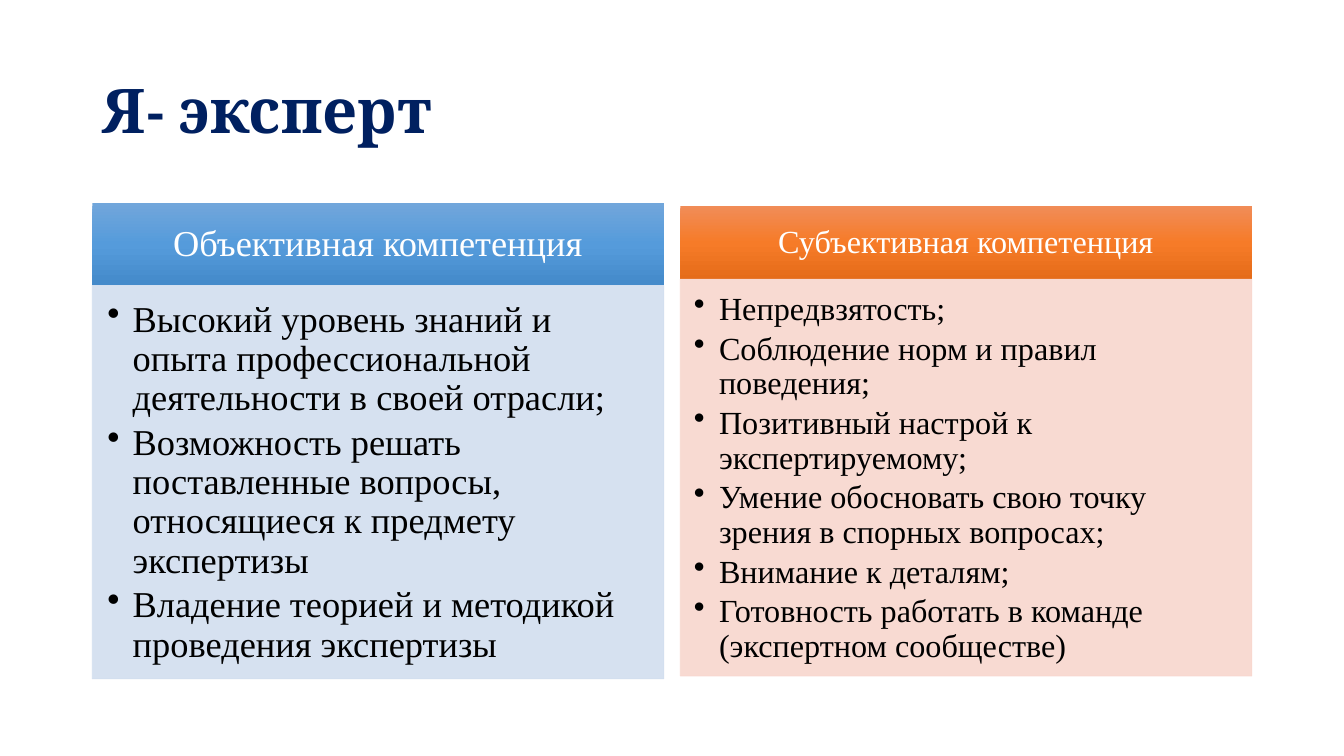
from lxml import etree
from pptx import Presentation
from pptx.dml.color import RGBColor
from pptx.enum.shapes import MSO_SHAPE
from pptx.enum.text import MSO_ANCHOR, PP_ALIGN
from pptx.oxml.ns import qn
from pptx.util import Pt

RECTANGLE = MSO_SHAPE.RECTANGLE
TOP, MIDDLE = MSO_ANCHOR.TOP, MSO_ANCHOR.MIDDLE
LEFT, CENTER = PP_ALIGN.LEFT, PP_ALIGN.CENTER


def color(value):
    return RGBColor.from_string(value)


class SlideBuilder:
    body_font = "Times New Roman"
    title_font = "Cambria"
    line_spacing = 0.9
    indent = 18

    def __init__(self, slide):
        self.slide = slide

    def set_text(self, shape, lines, font, anchor, insets, align=LEFT, after=0, bullets=False):
        frame = shape.text_frame
        sides = ("margin_left", "margin_top", "margin_right", "margin_bottom")
        frame_format = {"word_wrap": True, "vertical_anchor": anchor}
        frame_format.update(zip(sides, map(Pt, insets)))
        for name, value in frame_format.items():
            setattr(frame, name, value)
        for index, line in enumerate(lines):
            paragraph = frame.add_paragraph() if index else frame.paragraphs[0]
            paragraph.text = line
            paragraph_format = {"alignment": align, "line_spacing": self.line_spacing,
                                "space_after": Pt(after)}
            for name, value in paragraph_format.items():
                setattr(paragraph, name, value)
            if bullets:
                self.bullet(paragraph)
            for name, value in font.items():
                if name == "color":
                    paragraph.font.color.rgb = color(value)
                else:
                    setattr(paragraph.font, name, value)

    def bullet(self, paragraph):
        properties = paragraph._p.get_or_add_pPr()
        properties.set("marL", str(Pt(self.indent)))
        properties.set("indent", str(-Pt(self.indent)))
        etree.SubElement(properties, qn("a:buChar")).set("char", "•")

    def rectangle(self, left, top, width, height):
        shape = self.slide.shapes.add_shape(RECTANGLE, Pt(left), Pt(top), Pt(width), Pt(height))
        shape.shadow.inherit = False
        return shape

    def title(self, left, top, width, height, text):
        box = self.slide.shapes.add_textbox(Pt(left), Pt(top), Pt(width), Pt(height))
        font = {"name": self.title_font, "size": Pt(44), "bold": True, "color": "002060"}
        self.set_text(box, [text], font, MIDDLE, (7.2, 3.6, 7.2, 3.6))

    def header(self, left, top, width, height, text, size, gradient, insets):
        shape = self.rectangle(left, top, width, height)
        shape.line.fill.background()
        shape.fill.gradient()
        shape.fill.gradient_angle = 270
        stops = shape._element.spPr.find(".//" + qn("a:gsLst"))
        for stop in list(stops):
            stops.remove(stop)
        for position, value in zip((0, 50000, 100000), gradient):
            stop = etree.SubElement(stops, qn("a:gs"), pos=str(position))
            etree.SubElement(stop, qn("a:srgbClr"), val=value)
        font = {"name": self.body_font, "size": Pt(size), "color": "FFFFFF"}
        self.set_text(shape, [text], font, MIDDLE, insets, CENTER)

    def panel(self, left, top, width, height, items, size, fill, insets):
        shape = self.rectangle(left, top, width, height)
        shape.fill.solid()
        shape.fill.fore_color.rgb = color(fill)
        shape.line.color.rgb = color(fill)
        shape.line.width = Pt(0.5)
        for element in shape._element.spPr.iter(qn("a:srgbClr")):
            etree.SubElement(element, qn("a:alpha"), val="90000")
        font = {"name": self.body_font, "size": Pt(size), "color": "000000"}
        self.set_text(shape, items, font, TOP, insets, after=size * 0.15, bullets=True)


COLUMN_WIDTH = 408.2
COLUMNS = [
    {"left": 66, "top": 145.2, "header_height": 58.7, "panel_height": 281, "size": 26,
     "heading": "Объективная компетенция",
     "gradient": ("71A6DB", "559BDB", "448ACA"), "fill": "D2DEEF",
     "header_insets": (14.4, 8.4, 14.4, 8.4), "panel_insets": (10.8, 10.8, 14.4, 16.4),
     "items": [
         "Высокий уровень знаний и опыта профессиональной деятельности в своей отрасли;",
         "Возможность решать поставленные вопросы, относящиеся к предмету экспертизы",
         "Владение теорией и методикой проведения экспертизы"]},
    {"left": 486, "top": 147.5, "header_height": 51.9, "panel_height": 283.5, "size": 23,
     "heading": "Субъективная компетенция",
     "gradient": ("F18C57", "F67B28", "E56C19"), "fill": "F8D7CE",
     "header_insets": (13, 7.2, 13, 7.2), "panel_insets": (9.6, 9.6, 13, 14.4),
     "items": [
         "Непредвзятость;",
         "Соблюдение норм и правил поведения;",
         "Позитивный настрой к экспертируемому;",
         "Умение обосновать свою точку зрения в спорных вопросах;",
         "Внимание к деталям;",
         "Готовность работать в команде (экспертном сообществе)"]},
]


def main():
    presentation = Presentation()
    presentation.slide_width, presentation.slide_height = Pt(960), Pt(540)
    builder = SlideBuilder(presentation.slides.add_slide(presentation.slide_layouts[6]))
    for column in COLUMNS:
        left, top, size = column["left"], column["top"], column["size"]
        height = column["header_height"]
        builder.header(left, top, COLUMN_WIDTH, height, column["heading"], size,
                       column["gradient"], column["header_insets"])
        builder.panel(left, top + height, COLUMN_WIDTH, column["panel_height"], column["items"],
                      size, column["fill"], column["panel_insets"])
    builder.title(66, 28.8, 828, 104.4, "Я- эксперт")
    presentation.save("out.pptx")


if __name__ == "__main__":
    main()
